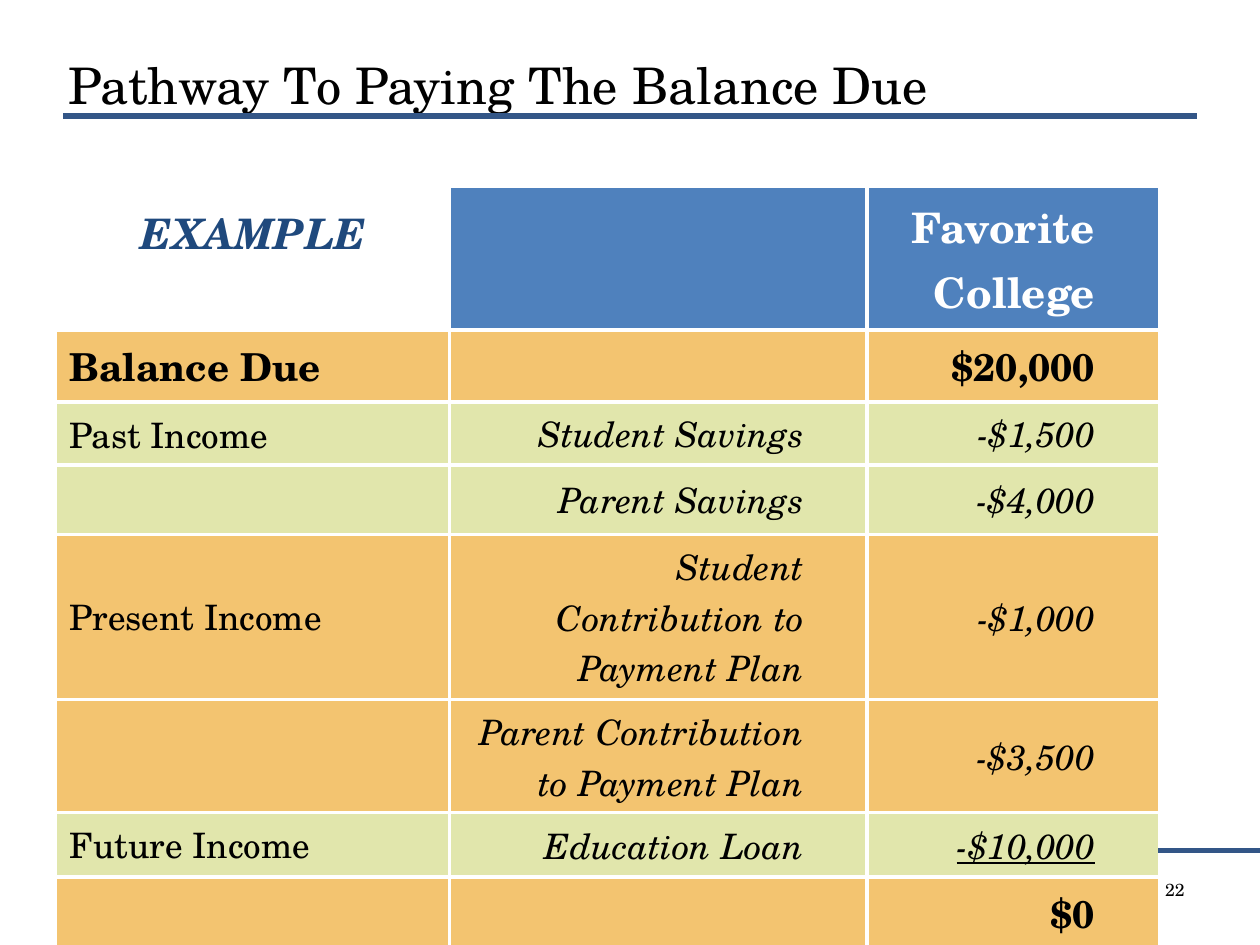
"""Build the slide that shows how a college balance due is paid."""
from lxml.etree import SubElement
from pptx import Presentation
from pptx.dml.color import RGBColor
from pptx.enum.shapes import MSO_CONNECTOR
from pptx.enum.text import MSO_ANCHOR, PP_ALIGN
from pptx.oxml.ns import qn
from pptx.util import Inches, Pt

FONT = "TeX Gyre Schola"
COLORS = {
    "ink": "000000",
    "white": "FFFFFF",
    "rule": "335687",
    "example": "1F497D",
    "header": "4F81BD",
    "orange": "F3C470",
    "green": "E1E6AC",
}
SLIDE_WIDTH, SLIDE_HEIGHT = Inches(10), Inches(7.5)
COLUMN_WIDTHS = (3.12, 3.31, 2.31)
LEDGER = [
    (1.13, "header", "", "", "Favorite College"),
    (0.57, "orange", "Balance Due", "", "$20,000"),
    (0.5, "green", "Past Income", "Student Savings", "-$1,500"),
    (0.55, "green", "", "Parent Savings", "-$4,000"),
    (1.31, "orange", "Present Income", "Student Contribution to Payment Plan", "-$1,000"),
    (0.9, "orange", "", "Parent Contribution to Payment Plan", "-$3,500"),
    (0.51, "green", "Future Income", "Education Loan", "-$10,000"),
    (0.55, "orange", "", "", "$0"),
]
HEADER, BALANCE, LOAN, REMAINDER = 0, 1, 6, 7


def color(name):
    """Return the named colour."""
    return RGBColor.from_string(COLORS[name])


def write(frame, text, size=20, ink="ink", bold=False, italic=False,
          underline=False, align=PP_ALIGN.LEFT):
    """Put formatted text into a text frame."""
    paragraph = frame.paragraphs[0]
    paragraph.alignment = align
    run = paragraph.add_run()
    run.text = text
    font = run.font
    font.name, font.size = FONT, Pt(size)
    font.bold, font.italic, font.underline = bold, italic, underline
    font.color.rgb = color(ink)


def add_title(slide, text):
    """Place the title just above the upper rule."""
    title = slide.shapes.title
    title.left, title.top = Inches(0.54), Inches(0.18)
    title.width, title.height = Inches(9), Inches(0.78)
    frame = title.text_frame
    frame.vertical_anchor = MSO_ANCHOR.BOTTOM
    frame.word_wrap = True
    frame.margin_left = 0
    write(frame, text, size=28.8)


def add_rule(slide, start, end, height, weight):
    """Draw a horizontal rule between shares of the slide width."""
    y = Inches(height)
    rule = slide.shapes.add_connector(
        MSO_CONNECTOR.STRAIGHT, int(SLIDE_WIDTH * start), y, int(SLIDE_WIDTH * end), y)
    rule.line.color.rgb = color("rule")
    rule.line.width = Pt(weight)
    SubElement(rule._element.spPr, qn("a:effectLst"))


def add_label(slide, text, left, top, width, height, wrap=True, **style):
    """Add a text box with one line of text."""
    label = slide.shapes.add_textbox(*map(Inches, (left, top, width, height)))
    label.text_frame.word_wrap = wrap
    write(label.text_frame, text, **style)


def add_borders(cell, row, column):
    """Draw white lines between cells and none around the table."""
    properties = cell._tc.get_or_add_tcPr()
    inner_sides = {
        "lnL": column > 0,
        "lnR": column < len(COLUMN_WIDTHS) - 1,
        "lnT": row > 0,
        "lnB": row < len(LEDGER) - 1,
    }
    for side, inner in inner_sides.items():
        line = SubElement(properties, qn(f"a:{side}"), w=str(Pt(2.25)))
        if inner:
            fill = SubElement(line, qn("a:solidFill"))
            SubElement(fill, qn("a:srgbClr"), val=COLORS["white"])
        else:
            SubElement(line, qn("a:noFill"))


def cell_style(row, column):
    """Return the text format for a place in the ledger."""
    if row == HEADER:
        return dict(size=24, ink="white", bold=True, align=PP_ALIGN.RIGHT)
    total = row in (BALANCE, REMAINDER)
    return dict(
        size=22 if total else 20,
        bold=total,
        italic=column > 0 and not total,
        underline=column == 2 and row == LOAN,
        align=PP_ALIGN.RIGHT if column else PP_ALIGN.LEFT,
    )


def fill_cell(cell, text, row, column, shade):
    """Border, shade and label one ledger cell."""
    add_borders(cell, row, column)
    if (row, column) == (HEADER, 0):
        cell.fill.background()
    else:
        cell.fill.solid()
        cell.fill.fore_color.rgb = color(shade)
    cell.vertical_anchor = MSO_ANCHOR.MIDDLE
    cell.margin_left = Inches(0.2 if row == HEADER else 0.1)
    cell.margin_right = Inches(0.5 if column else 0.1)
    if text:
        write(cell.text_frame, text, **cell_style(row, column))


def add_ledger(slide):
    """Add the table of payments against the balance."""
    height = sum(entry[0] for entry in LEDGER)
    ledger = slide.shapes.add_table(
        len(LEDGER), len(COLUMN_WIDTHS), Inches(0.45), Inches(1.49),
        Inches(sum(COLUMN_WIDTHS)), Inches(height)).table
    ledger.first_row = ledger.horz_banding = False
    for column, width in zip(ledger.columns, COLUMN_WIDTHS):
        column.width = Inches(width)
    for row, (row_height, shade, *texts) in enumerate(LEDGER):
        ledger.rows[row].height = Inches(row_height)
        for column, text in enumerate(texts):
            fill_cell(ledger.cell(row, column), text, row, column, shade)


def main():
    """Build and save the presentation."""
    presentation = Presentation()
    presentation.slide_width, presentation.slide_height = SLIDE_WIDTH, SLIDE_HEIGHT
    slide = presentation.slides.add_slide(presentation.slide_layouts[5])
    add_label(slide, "22", 7.17, 6.93, 2.33, 0.4, size=10, align=PP_ALIGN.RIGHT)
    add_rule(slide, 0.05, 0.95, 0.92, 3)
    add_rule(slide, 0.05, 1, 6.75, 2.5)
    add_title(slide, "Pathway To Paying The Balance Due")
    add_ledger(slide)
    add_label(slide, "EXAMPLE", 1.02, 1.6, 2.03, 0.51, wrap=False,
              size=24, ink="example", bold=True, italic=True)
    presentation.save("out.pptx")


if __name__ == "__main__":
    main()
